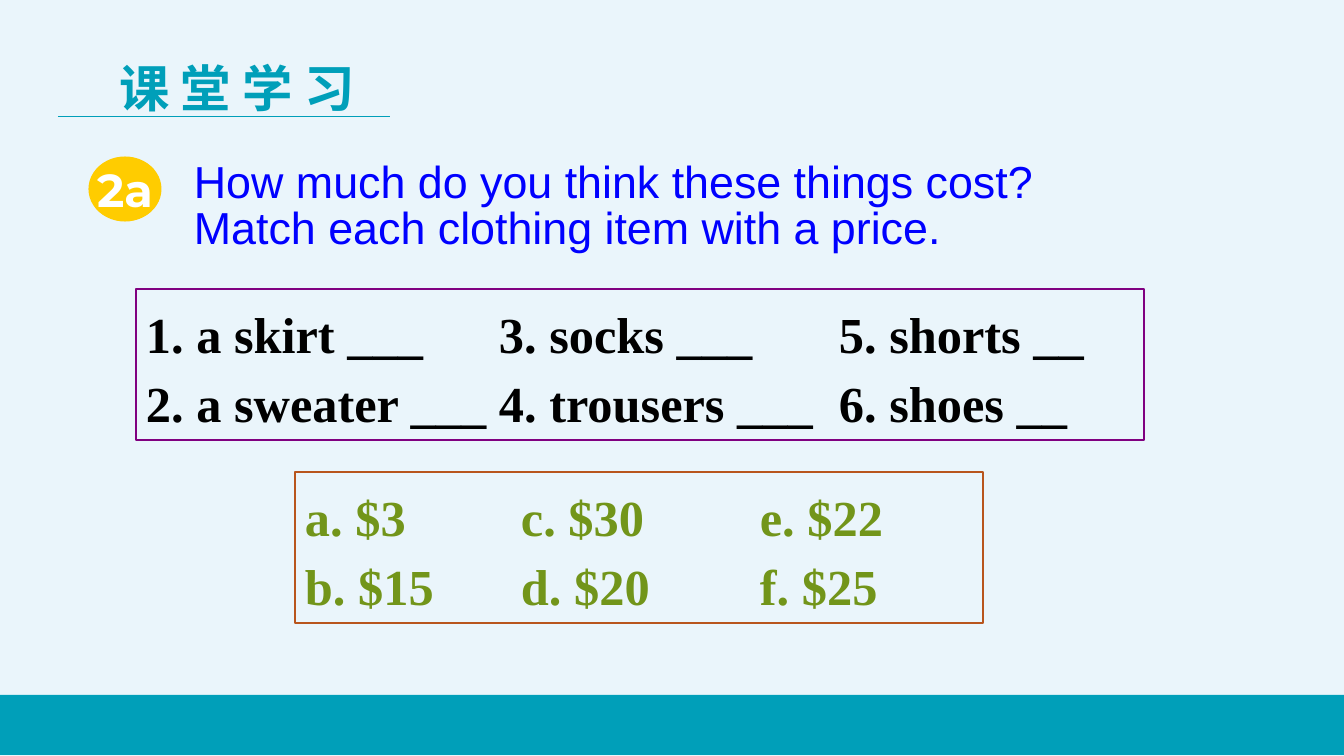
import pptx
import pptx.dml.color
import pptx.enum.shapes
import pptx.enum.text
import pptx.oxml
import pptx.oxml.ns
import pptx.util
from lxml import etree

RGB = pptx.dml.color.RGBColor
SHAPE = pptx.enum.shapes.MSO_SHAPE
ALIGN = pptx.enum.text.PP_ALIGN
ANCHOR = pptx.enum.text.MSO_ANCHOR

PALE_BLUE = RGB(0xEA, 0xF5, 0xFB)
TEAL = RGB(0x00, 0x9F, 0xB9)
YELLOW = RGB(0xFF, 0xCC, 0x00)
WHITE = RGB(0xFF, 0xFF, 0xFF)
BLUE = RGB(0x00, 0x00, 0xFF)
PURPLE = RGB(0x80, 0x00, 0x80)
BLACK = RGB(0x00, 0x00, 0x00)
RUST = RGB(0xB8, 0x55, 0x1D)
GREEN = RGB(0x72, 0x95, 0x1A)

PAGE_WIDTH, PAGE_HEIGHT = 1344, 756
EMU_PER_PX = 12192000 / PAGE_WIDTH


def px(length):
    return pptx.util.Emu(round(length * EMU_PER_PX))


def set_font(para, name, size, color, bold=False):
    para.font.name = name
    para.font.size = pptx.util.Pt(size)
    para.font.bold = bold
    para.font.color.rgb = color


def set_tabs(para, stops):
    tabs = etree.SubElement(para._p.get_or_add_pPr(), pptx.oxml.ns.qn("a:tabLst"))
    for stop in stops:
        etree.SubElement(tabs, pptx.oxml.ns.qn("a:tab"), pos=str(px(stop)), algn="l")


def add_shape(page, preset, place, fill=None, line=None, line_width=1.5):
    shape = page.shapes.add_shape(preset, *map(px, place))
    shape.shadow.inherit = False
    if fill is None:
        shape.fill.background()
    else:
        shape.fill.solid()
        shape.fill.fore_color.rgb = fill
    if line is None:
        shape.line.fill.background()
    else:
        shape.line.color.rgb = line
        shape.line.width = pptx.util.Pt(line_width)
    return shape


def add_heading(page, text):
    title = page.shapes.title
    title.left, title.top, title.width, title.height = map(px, (109, 52, 269, 72))
    frame = title.text_frame
    frame.auto_size = pptx.enum.text.MSO_AUTO_SIZE.NONE
    frame.word_wrap = False
    frame.vertical_anchor = ANCHOR.TOP
    para = frame.paragraphs[0]
    para.text = text
    para.alignment = ALIGN.LEFT
    set_font(para, "Noto Sans CJK SC", 36, TEAL, True)
    defaults = para._p.pPr.find(pptx.oxml.ns.qn("a:defRPr"))
    etree.SubElement(defaults, pptx.oxml.ns.qn("a:ea"), typeface="Noto Sans CJK SC")

    rule = page.shapes.add_connector(
        pptx.enum.shapes.MSO_CONNECTOR.STRAIGHT, px(58), px(116), px(390), px(116))
    rule.line.color.rgb = TEAL
    rule.line.width = pptx.util.Pt(0.5)
    etree.SubElement(rule._element.spPr, pptx.oxml.ns.qn("a:effectLst"))


def add_badge(page, text):
    badge = add_shape(page, SHAPE.OVAL, (89, 157, 72, 64), YELLOW, YELLOW, 0.75)
    frame = badge.text_frame
    frame.word_wrap = False
    frame.vertical_anchor = ANCHOR.MIDDLE
    para = frame.paragraphs[0]
    para.text = text
    para.alignment = ALIGN.CENTER
    set_font(para, "Montserrat", 33, WHITE, True)


def add_prompt(page, text):
    box = page.shapes.add_textbox(*map(px, (184, 157, 941, 103)))
    box.text_frame.word_wrap = True
    para = box.text_frame.paragraphs[0]
    para.text = text
    para.line_spacing = 0.85
    set_font(para, "Arial", 32, BLUE)


def add_word_box(page, place, rows, stops, line, color):
    box = add_shape(page, SHAPE.RECTANGLE, place, line=line)
    frame = box.text_frame
    frame.word_wrap = True
    frame.vertical_anchor = ANCHOR.TOP
    frame.text = "\n".join("\t".join(row) for row in rows)
    for para in frame.paragraphs:
        para.alignment = ALIGN.LEFT
        para.line_spacing = 1.15
        set_tabs(para, stops)
        set_font(para, "Times New Roman", 36, color, True)


def main():
    deck = pptx.Presentation()
    deck.slide_width, deck.slide_height = px(PAGE_WIDTH), px(PAGE_HEIGHT)
    page = deck.slides.add_slide(deck.slide_layouts[5])
    page.background.fill.solid()
    page.background.fill.fore_color.rgb = PALE_BLUE

    add_shape(page, SHAPE.RECTANGLE, (0, 695, PAGE_WIDTH, 60), TEAL)
    add_heading(page, "课 堂 学 习")
    add_badge(page, "2a")
    add_prompt(page, "How much do you think these things cost? "
                     "Match each clothing item with a price.")
    add_word_box(page, (136, 289, 1008, 151), [
        ("1. a skirt ___", "3. socks ___", "5. shorts __"),
        ("2. a sweater ___", "4. trousers ___", "6. shoes __"),
    ], (353, 693), PURPLE, BLACK)
    add_word_box(page, (295, 472, 688, 151), [
        ("a. $3", "c. $30", "e. $22"),
        ("b. $15", "d. $20", "f. $25"),
    ], (216, 455), RUST, GREEN)

    deck.save("out.pptx")


if __name__ == "__main__":
    main()
